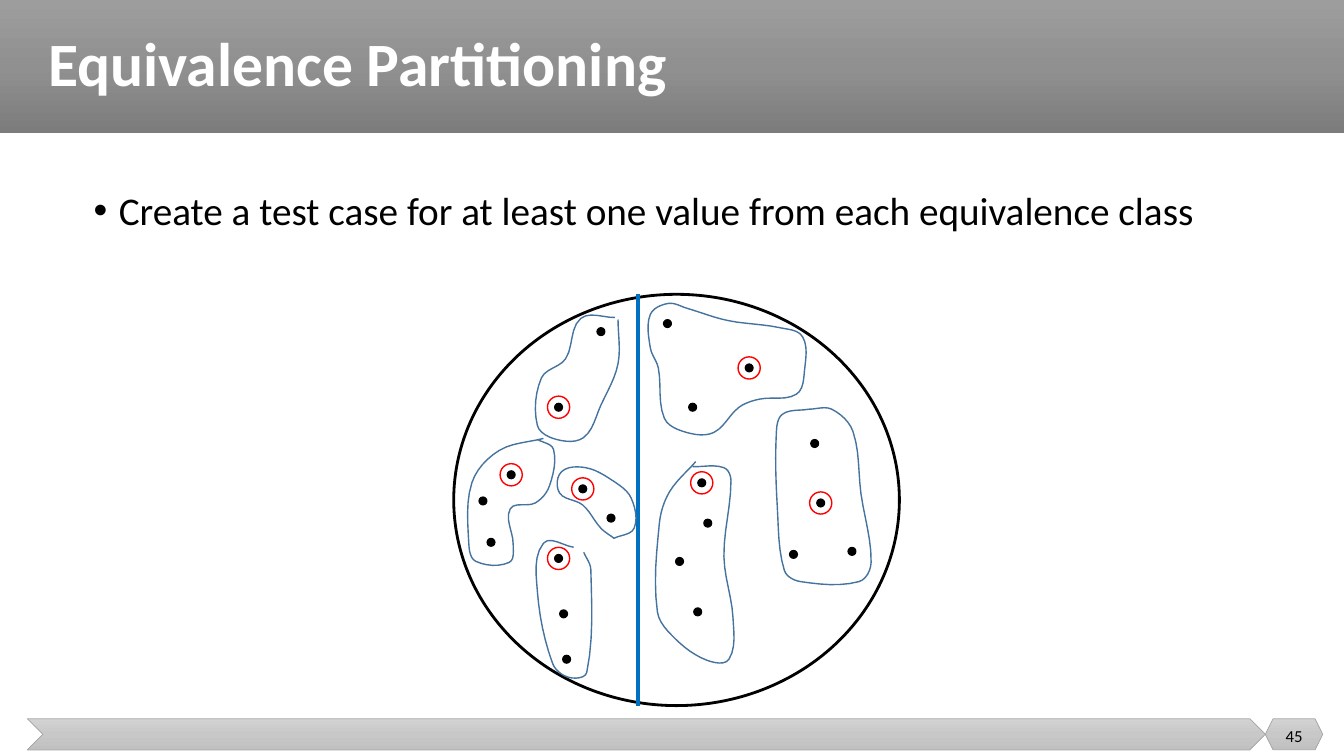
from dataclasses import dataclass
from math import dist

from lxml import etree
from pptx import Presentation
from pptx.dml.color import RGBColor
from pptx.enum.shapes import MSO_CONNECTOR, MSO_SHAPE
from pptx.enum.text import MSO_ANCHOR, PP_ALIGN
from pptx.oxml import parse_xml
from pptx.oxml.ns import nsdecls, qn
from pptx.util import Cm, Pt

RECTANGLE, CHEVRON = MSO_SHAPE.RECTANGLE, MSO_SHAPE.CHEVRON
HEXAGON, OVAL = MSO_SHAPE.HEXAGON, MSO_SHAPE.OVAL
STRAIGHT = MSO_CONNECTOR.STRAIGHT
TOP, MIDDLE = MSO_ANCHOR.TOP, MSO_ANCHOR.MIDDLE
LEFT, CENTER = PP_ALIGN.LEFT, PP_ALIGN.CENTER


@dataclass(frozen=True)
class Theme:
    font: str = "Calibri"
    title_size: int = 44
    body_size: int = 28
    number_size: int = 12
    white: str = "FFFFFF"
    black: str = "000000"
    divider: str = "0070C0"
    outline: str = "43739E"
    selected: str = "FF0000"
    footer_line: str = "A5A5A5"
    header_gradient: tuple = ("9D9D9D", "909090", "7C7C7C")
    footer_gradient: tuple = ("D2D2D2", "C8C8C8", "C0C0C0")


# Each equivalence class: its outline, then its values with the one chosen
# for a test first. All positions are in inches.
EQUIVALENCE_CLASSES = [
    ([(6.1, 3.15), (5.76, 3.16), (5.61, 3.56), (5.37, 3.75), (5.33, 4.22), (5.52, 4.36),
      (5.79, 4.34), (5.96, 4.02), (6.13, 3.61), (6.13, 3.17)],
     [(5.54, 4.04), (5.96, 3.29)]),
    ([(5.39, 4.35), (4.95, 4.47), (4.68, 4.79), (4.65, 5.4), (4.72, 5.57), (5.05, 5.58),
      (5.09, 5.4), (5.06, 5.05), (5.31, 4.99), (5.45, 4.82), (5.49, 4.46), (5.33, 4.36)],
     [(5.07, 4.71), (4.79, 4.97), (4.87, 5.38)]),
    ([(5.69, 5.43), (5.39, 5.39), (5.33, 5.87), (5.48, 6.58), (5.64, 6.72), (5.82, 6.67),
      (5.86, 5.65), (5.79, 5.48)],
     [(5.54, 5.54), (5.59, 6.09), (5.62, 6.54)]),
    ([(6.9, 4.58), (6.64, 4.88), (6.54, 5.19), (6.52, 6.07), (6.7, 6.34), (7.01, 6.55),
      (7.23, 6.54), (7.27, 6.13), (7.18, 5.52), (7.25, 4.77), (7.18, 4.64), (6.87, 4.63)],
     [(6.96, 4.79), (6.92, 6.07), (6.74, 5.57), (7.02, 5.19)]),
    ([(6.82, 3.06), (6.63, 3.01), (6.45, 3.12), (6.45, 3.45), (6.53, 3.65), (6.59, 4.15),
      (6.81, 4.29), (7.08, 4.29), (7.33, 4.04), (7.53, 3.96), (7.9, 3.91), (7.98, 3.67),
      (7.96, 3.34), (7.73, 3.25), (7.22, 3.18), (6.82, 3.06)],
     [(7.43, 3.65), (6.62, 3.21), (6.87, 4.04)]),
    ([(6.09, 5.34), (6.29, 5.24), (6.26, 4.94), (6.08, 4.77), (5.81, 4.64), (5.57, 4.68),
      (5.55, 4.89), (5.78, 5.01), (5.96, 5.24), (6.09, 5.34)],
     [(5.78, 4.85), (6.06, 5.14)]),
    ([(8.02, 4.06), (7.76, 4.11), (7.7, 4.3), (7.71, 5.03), (7.78, 5.66), (7.94, 5.77),
      (8.52, 5.77), (8.64, 5.58), (8.54, 4.9), (8.46, 4.28), (8.25, 4.06), (8.02, 4.06)],
     [(8.14, 4.99), (8.08, 4.4), (7.87, 5.5), (8.45, 5.47)]),
]


def length(inches):
    return Cm(inches * 2.54)


def smooth(points, steps=6):
    """Return points on Bezier curves that pass through all given points."""
    padded = [points[0], *points, points[-1]]
    curve = [points[0]]
    for before, start, end, after in zip(padded, padded[1:], padded[2:], padded[3:]):
        reach = dist(start, end) / 3
        leaving = reach / (dist(before, end) or 1)
        arriving = reach / (dist(start, after) or 1)
        for step in range(1, steps + 1):
            t = step / steps
            curve.append(tuple(
                (1 - t) ** 3 * s + 3 * t * (1 - t) ** 2 * (s + leaving * (e - b))
                + 3 * t ** 2 * (1 - t) * (e - arriving * (a - s)) + t ** 3 * e
                for b, s, e, a in zip(before, start, end, after)))
    return curve


class SlideBuilder:
    def __init__(self, slide, theme):
        self.slide = slide
        self.theme = theme

    def style(self, shape, fill=None, line=None, width=1):
        """Apply a plain fill, a gradient given as a tuple, or none, and a line."""
        shape.shadow.inherit = False
        if isinstance(fill, tuple):
            shape.fill.background()
            stops = "".join(
                f'<a:gs pos="{index * 50000}"><a:srgbClr val="{color}"/></a:gs>'
                for index, color in enumerate(fill))
            properties = shape._element.spPr
            properties.replace(properties.find(qn("a:noFill")), parse_xml(
                f'<a:gradFill {nsdecls("a")}><a:gsLst>{stops}</a:gsLst>'
                '<a:lin ang="5400000" scaled="0"/></a:gradFill>'))
        elif fill:
            shape.fill.solid()
            shape.fill.fore_color.rgb = RGBColor.from_string(fill)
        else:
            shape.fill.background()
        if line:
            shape.line.color.rgb = RGBColor.from_string(line)
            shape.line.width = Pt(width)
        else:
            shape.line.fill.background()

    def shape(self, kind, box, **style):
        self.style(self.slide.shapes.add_shape(kind, *map(length, box)), **style)

    def circle(self, center, diameter, **style):
        x, y = center
        self.shape(OVAL, (x - diameter / 2, y - diameter / 2, diameter, diameter), **style)

    def outline(self, points, **style):
        start, *others = [tuple(map(length, point)) for point in smooth(points)]
        builder = self.slide.shapes.build_freeform(*start)
        builder.add_line_segments(others, close=False)
        self.style(builder.convert_to_shape(), **style)

    def line(self, start, end, color, width):
        connector = self.slide.shapes.add_connector(STRAIGHT, *map(length, start + end))
        connector.line.color.rgb = RGBColor.from_string(color)
        connector.line.width = Pt(width)
        etree.SubElement(connector._element.spPr, qn("a:effectLst"))

    def text(self, text, box, size, color, bold=False, align=LEFT, anchor=TOP,
             spacing=0.9, bullet=None):
        frame = self.slide.shapes.add_textbox(*map(length, box)).text_frame
        frame.word_wrap = True
        frame.vertical_anchor = anchor
        paragraph = frame.paragraphs[0]
        paragraph.alignment = align
        paragraph.line_spacing = spacing
        run = paragraph.add_run()
        run.text = text
        run.font.name = self.theme.font
        run.font.size = Pt(size)
        run.font.bold = bold
        run.font.color.rgb = RGBColor.from_string(color)
        if bullet:
            properties = paragraph._p.get_or_add_pPr()
            properties.set("marL", str(length(0.25)))
            properties.set("indent", str(-length(0.25)))
            etree.SubElement(properties, qn("a:buFont"), typeface="Arial")
            etree.SubElement(properties, qn("a:buChar"), char=bullet)


def main():
    theme = Theme()
    presentation = Presentation()
    presentation.slide_width, presentation.slide_height = length(13.33), length(7.5)
    slide = presentation.slides.add_slide(presentation.slide_layouts[6])
    builder = SlideBuilder(slide, theme)

    builder.shape(RECTANGLE, (0, 0, 13.33, 1.32), fill=theme.header_gradient)
    for kind, left, width in ((CHEVRON, 0.27, 12.28), (HEXAGON, 12.55, 0.57)):
        builder.shape(kind, (left, 7.13, width, 0.31), fill=theme.footer_gradient,
                      line=theme.footer_line, width=0.5)
    builder.text("Equivalence Partitioning", (0.38, 0, 12.74, 1.32), theme.title_size,
                 theme.white, bold=True, anchor=MIDDLE)
    builder.text("Create a test case for at least one value from each equivalence class",
                 (0.83, 1.85, 11.68, 0.92), theme.body_size, theme.black, bullet="•")
    builder.text("45", (12.55, 7.1, 0.57, 0.4), theme.number_size, theme.black,
                 align=CENTER, anchor=MIDDLE, spacing=1.0)

    builder.shape(OVAL, (4.5, 2.92, 4.42, 4.08), line=theme.black, width=2)
    builder.line((6.33, 2.92), (6.33, 7), theme.divider, 3)
    for points, values in EQUIVALENCE_CLASSES:
        builder.outline(points, line=theme.outline)
        for value in values:
            builder.circle(value, 0.08, fill=theme.black, line=theme.black, width=0.75)
        builder.circle(values[0], 0.22, line=theme.selected)

    presentation.save("out.pptx")


if __name__ == "__main__":
    main()
